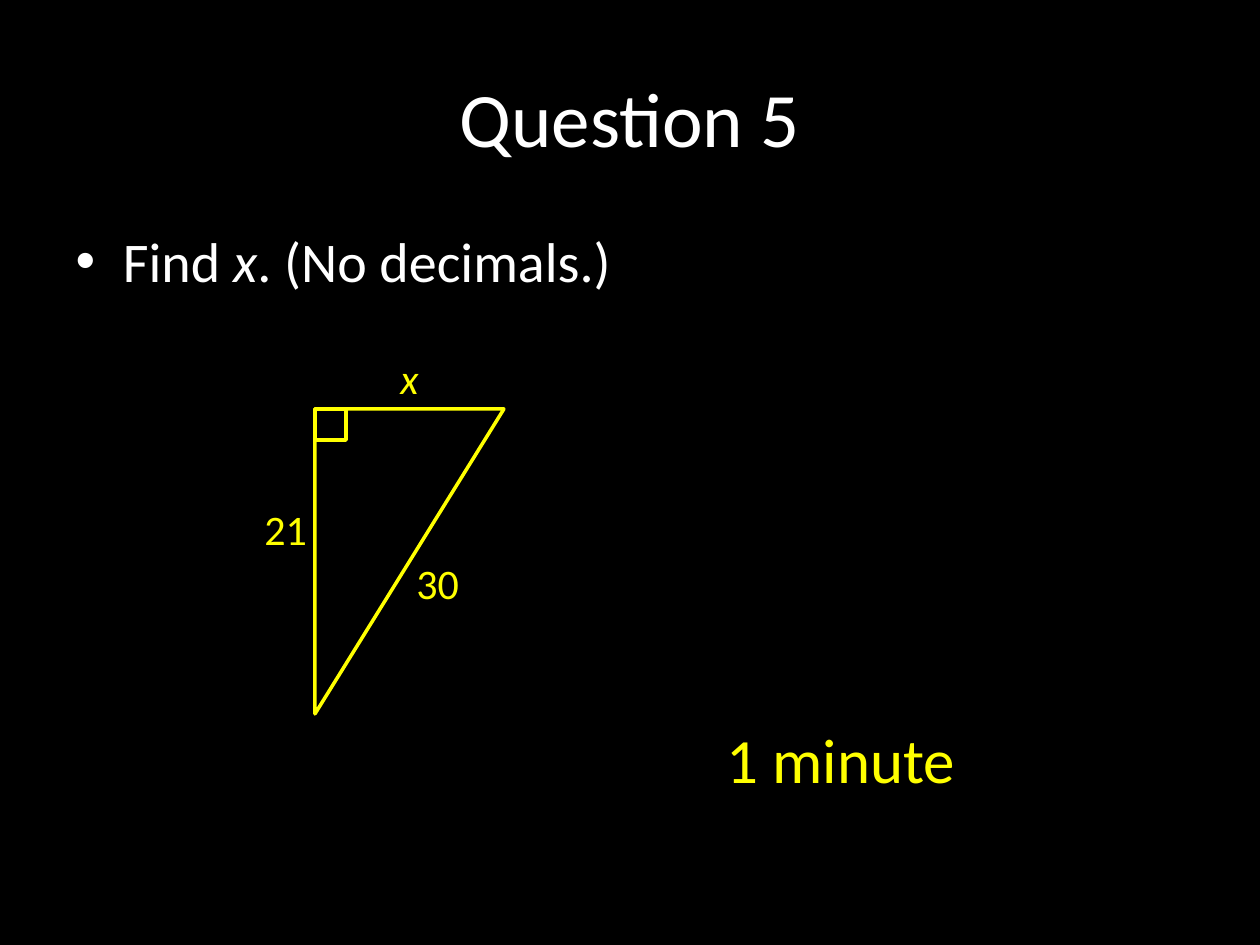
from pptx import Presentation
from pptx.dml.color import RGBColor
from pptx.enum.shapes import MSO_SHAPE
from pptx.enum.text import MSO_ANCHOR, PP_ALIGN
from pptx.util import Pt

EMU_PER_PX = 914400 / 126
COLORS = {"background": "000000", "text": "FFFFFF", "accent": "FFFF00"}
FONT = "Calibri"


def px(*lengths):
    """Turn pixel lengths into a list of EMU lengths."""
    return [round(length * EMU_PER_PX) for length in lengths]


def place(holder, box):
    """Move a placeholder to a pixel box."""
    holder.left, holder.top, holder.width, holder.height = px(*box)


def write(frame, *runs, size, color="text", italic=(), align=None, anchor=None):
    """Fill a text frame with one paragraph, setting the runs listed in italic aslant."""
    frame.word_wrap = True
    if anchor is not None:
        frame.vertical_anchor = anchor
    paragraph = frame.paragraphs[0]
    paragraph.alignment = align
    for words in runs:
        run = paragraph.add_run()
        run.text = words
        run.font.name = FONT
        run.font.size = Pt(size)
        run.font.italic = words in italic
        run.font.color.rgb = RGBColor.from_string(COLORS[color])


def add_label(slide, box, words, **form):
    """Add an accent-coloured text box."""
    label = slide.shapes.add_textbox(*px(*box))
    write(label.text_frame, words, color="accent", **form)


def add_outline(shapes, preset, box):
    """Add an unfilled preset shape with an accent line."""
    outline = shapes.add_shape(preset, *px(*box))
    outline.shadow.inherit = False
    outline.fill.background()
    outline.line.color.rgb = RGBColor.from_string(COLORS["accent"])
    outline.line.width = Pt(2)
    return outline


def add_heading(slide, box):
    """Write the title placeholder."""
    place(slide.shapes.title, box)
    write(slide.shapes.title.text_frame, "Question 5", size=44,
          align=PP_ALIGN.CENTER, anchor=MSO_ANCHOR.MIDDLE)


def add_question(slide, box):
    """Write the bulleted question in the body placeholder."""
    question = slide.placeholders[1]
    place(question, box)
    write(question.text_frame, "Find ", "x", ". (No decimals.)", size=32, italic=("x",))


def add_right_triangle(slide, box):
    """Draw the triangle, its right-angle mark and its side labels."""
    left, top, width, height = box
    figure = slide.shapes.add_group_shape()
    triangle = add_outline(figure.shapes, MSO_SHAPE.RIGHT_TRIANGLE, box)
    triangle._element.spPr.xfrm.set("flipV", "1")
    add_outline(figure.shapes, MSO_SHAPE.RECTANGLE, (left, top, width // 6, width // 6))
    for side, dx, dy in (("x", 73, -63), ("21", -63, 88), ("30", 89, 142)):
        add_label(slide, (left + dx, top + dy, 116, 63), side, size=24, italic=("x",))


def add_time_limit(slide, box):
    """Write the time allowed for the question."""
    add_label(slide, box, "1 minute", size=36)


def main():
    """Build and save the slide."""
    deck = Presentation()
    deck.slide_width, deck.slide_height = px(1260, 945)
    slide = deck.slides.add_slide(deck.slide_layouts[1])
    slide.background.fill.solid()
    slide.background.fill.fore_color.rgb = RGBColor.from_string(COLORS["background"])
    add_heading(slide, (63, 38, 1134, 158))
    add_question(slide, (63, 220, 1134, 624))
    add_right_triangle(slide, (315, 409, 189, 305))
    add_time_limit(slide, (714, 714, 451, 89))
    deck.save("out.pptx")


if __name__ == "__main__":
    main()
